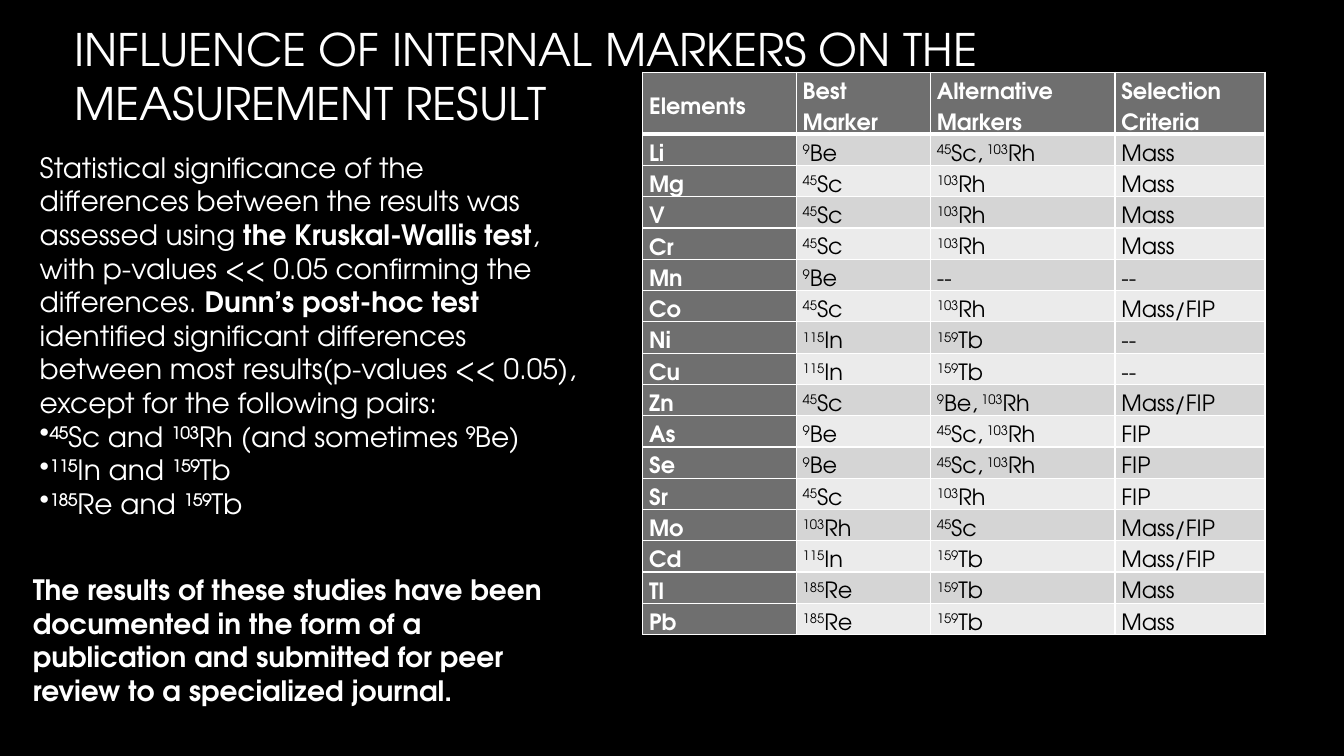
from lxml.etree import SubElement
from pptx import Presentation
from pptx.dml.color import RGBColor
from pptx.enum.text import MSO_ANCHOR, MSO_AUTO_SIZE, PP_ALIGN
from pptx.oxml.ns import qn
from pptx.util import Cm, Pt

COLOURS = {"black": "000000", "white": "FFFFFF", "dark": "6F6F6F",
           "band": "D5D5D5", "light": "EBEBEB"}

# In the texts, ^ encloses superscript and * encloses bold
HEADINGS = ["Elements", "Best Marker", "Alternative Markers", "Selection Criteria"]
BE, SC, RH = "^9^Be", "^45^Sc", "^103^Rh"
IN, TB, RE = "^115^In", "^159^Tb", "^185^Re"
SC_RH = "^45^Sc,^ 103^Rh"
MARKERS = [
    ["Li", BE, SC_RH, "Mass"],
    ["Mg", SC, RH, "Mass"],
    ["V", SC, RH, "Mass"],
    ["Cr", SC, RH, "Mass"],
    ["Mn", BE, "--", "--"],
    ["Co", SC, RH, "Mass/FIP"],
    ["Ni", IN, TB, "--"],
    ["Cu", IN, TB, "--"],
    ["Zn", SC, "^9^Be,^ 103^Rh", "Mass/FIP"],
    ["As", BE, SC_RH, "FIP"],
    ["Se", BE, SC_RH, "FIP"],
    ["Sr", SC, RH, "FIP"],
    ["Mo", RH, SC, "Mass/FIP"],
    ["Cd", IN, TB, "Mass/FIP"],
    ["Tl", RE, TB, "Mass"],
    ["Pb", RE, TB, "Mass"],
]
FINDINGS = [
    "Statistical significance of the differences between the results was assessed "
    "using *the Kruskal-Wallis test*, with p-values << 0.05 confirming the "
    "differences. *Dunn’s post-hoc test *identified significant differences between "
    "most results(p-values << 0.05), except for the following pairs:",
    "⁴⁵Sc and ¹⁰³Rh (and sometimes ⁹Be)",
    "¹¹⁵In and ¹⁵⁹Tb",
    "¹⁸⁵Re and ¹⁵⁹Tb",
]
CONCLUSION = ("*The results of these studies have been documented in the form of a "
              "publication and submitted for peer review to a specialized journal.*")


def apply(target, values):
    for name, value in values.items():
        setattr(target, name, value)


class SlideBuilder:
    font = "TeX Gyre Adventor"
    cell_format = {"vertical_anchor": MSO_ANCHOR.MIDDLE, "margin_left": Cm(0.16),
                   "margin_right": Cm(0.16), "margin_top": 0, "margin_bottom": 0}
    cell_paragraph = {"alignment": PP_ALIGN.JUSTIFY, "line_spacing": 1.5,
                      "space_after": Pt(10)}

    def __init__(self, slide):
        self.slide = slide

    def colour(self, name):
        return RGBColor.from_string(COLOURS[name])

    def background(self, name):
        fill = self.slide.background.fill
        fill.solid()
        fill.fore_color.rgb = self.colour(name)

    def add_runs(self, paragraph, text, size, colour, bold=False):
        for b, part in enumerate(text.split("*")):
            for s, piece in enumerate(part.split("^")):
                if not piece:
                    continue
                run = paragraph.add_run()
                run.text = piece
                apply(run.font, {"name": self.font, "size": Pt(size),
                                 "bold": bold or b % 2 == 1})
                run.font.color.rgb = self.colour(colour)
                if s % 2:
                    run.font._element.set("baseline", "30000")

    def text(self, box, paragraphs, size, **frame_format):
        frame = self.slide.shapes.add_textbox(*map(Cm, box)).text_frame
        apply(frame, {"word_wrap": True, **frame_format})
        for i, text in enumerate(paragraphs):
            paragraph = frame.add_paragraph() if i else frame.paragraphs[0]
            self.add_runs(paragraph, text, size, "white")
            if i:
                SubElement(paragraph._p.get_or_add_pPr(), qn("a:buChar"), char="•")

    def borders(self, cell, widths):
        for side, width in widths.items():
            line = SubElement(cell._tc.get_or_add_tcPr(), qn(f"a:ln{side}"),
                              w=str(Pt(width)))
            fill = SubElement(line, qn("a:solidFill"))
            SubElement(fill, qn("a:srgbClr"), val=COLOURS["white"])

    def table(self, left, top, column_widths, header_height, row_height, rows):
        heights = [header_height] + [row_height] * (len(rows) - 1)
        table = self.slide.shapes.add_table(
            len(rows), len(column_widths), Cm(left), Cm(top),
            Cm(sum(column_widths)), Cm(sum(heights))).table
        for column, width in zip(table.columns, column_widths):
            column.width = Cm(width)
        for r, (row, height) in enumerate(zip(rows, heights)):
            table.rows[r].height = Cm(height)
            for c, text in enumerate(row):
                cell = table.cell(r, c)
                label = r == 0 or c == 0
                apply(cell, self.cell_format)
                self.borders(cell, {"L": 1, "R": 1, "T": 3 if r == 1 else 1,
                                    "B": 3 if r == 0 else 1})
                cell.fill.solid()
                cell.fill.fore_color.rgb = self.colour(
                    "dark" if label else "band" if r % 2 else "light")
                paragraph = cell.text_frame.paragraphs[0]
                apply(paragraph, self.cell_paragraph)
                self.add_runs(paragraph, text, 16, "white" if label else "black", label)


def main():
    deck = Presentation()
    apply(deck, {"slide_width": Cm(33.87), "slide_height": Cm(19.05)})
    builder = SlideBuilder(deck.slides.add_slide(deck.slide_layouts[6]))
    builder.background("black")

    # Marker table
    builder.table(16.2, 1.82, [3.87, 3.38, 4.65, 3.78], 1.47, 0.69,
                  [HEADINGS] + MARKERS)

    # Statistical findings
    grow = {"auto_size": MSO_AUTO_SIZE.SHAPE_TO_FIT_TEXT}
    builder.text((0.75, 3.66, 14.05, 10.6), FINDINGS, 20, **grow)

    # Title
    builder.text((1.63, 0.15, 23.8, 3.53),
                 ["INFLUENCE OF INTERNAL MARKERS ON THE MEASUREMENT RESULT"], 32,
                 vertical_anchor=MSO_ANCHOR.MIDDLE)

    # Conclusion
    builder.text((0.58, 14.3, 13.8, 3.68), [CONCLUSION], 20, **grow)

    deck.save("out.pptx")


if __name__ == "__main__":
    main()
